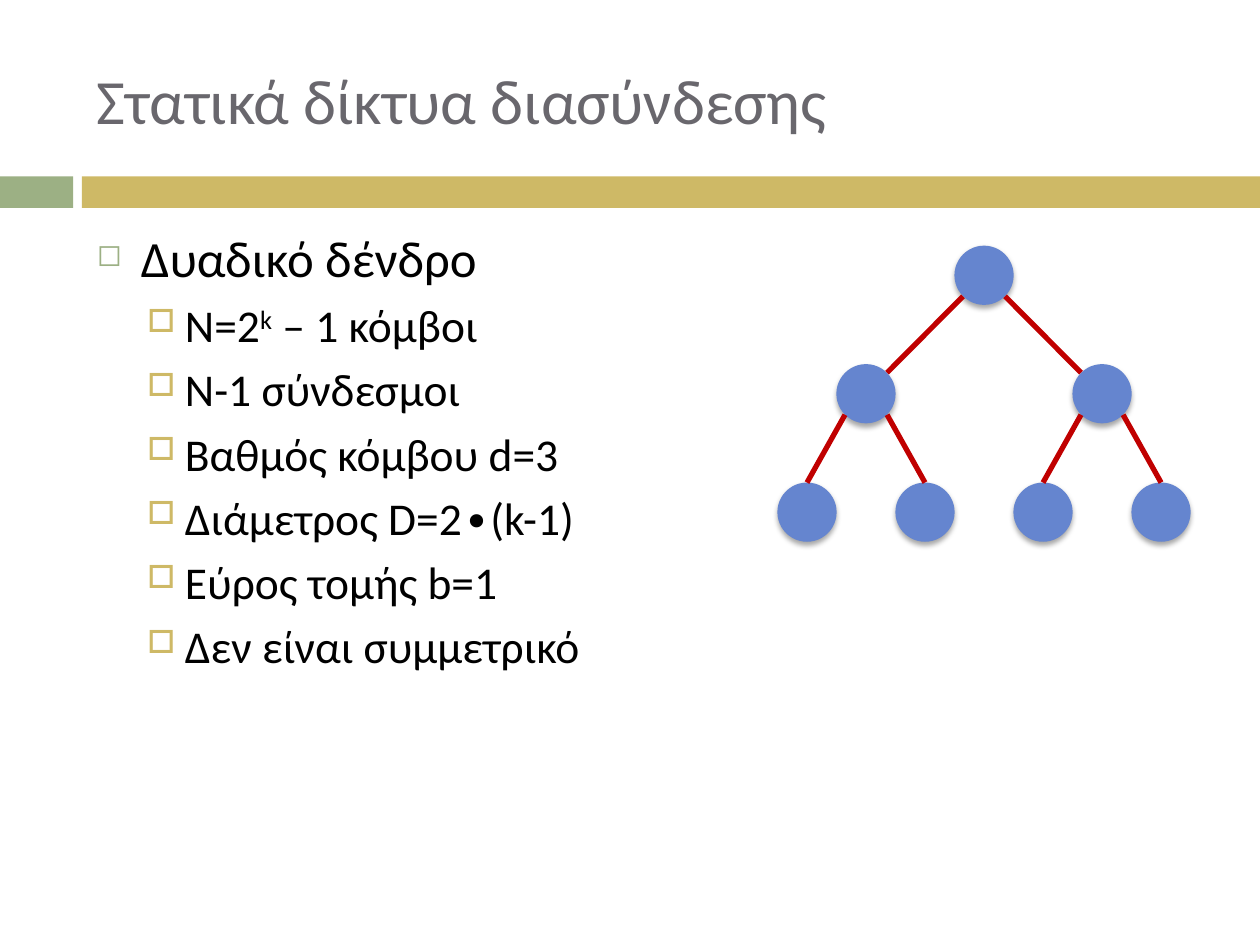
from lxml import etree
from pptx import Presentation
from pptx.dml.color import RGBColor
from pptx.enum.shapes import MSO_CONNECTOR as CONN, MSO_SHAPE as SHAPE
from pptx.enum.text import MSO_ANCHOR as ANCHOR
from pptx.oxml.ns import qn
from pptx.util import Inches, Pt

FONT = "Calibri"
GREEN, GOLD, BLUE, RED = "9CB084", "CEB966", "6585CF", "C00000"
GREY, BLACK = "69676D", "000000"

# Level formats: bullet sizes are percentages, indents are inches
TOPIC = dict(size=29, before=7, left=0.35, hang=0.35, char="◻", color=GREEN, pct=60)
DETAIL = dict(size=26, before=5.5, left=0.7, hang=0.3, char="□", color=GOLD, pct=70)

# Each line is a list of (text, is superscript)
DETAILS = [
    [("N=2", False), ("k", True), (" – 1 κόμβοι", False)],
    [("N-1 σύνδεσμοι", False)],
    [("Βαθμός κόμβου d=3", False)],
    [("Διάμετρος D=2∙(k-1)", False)],
    [("Εύρος τομής b=1", False)],
    [("Δεν είναι συμμετρικό", False)],
]


def rgb(color):
    return RGBColor.from_string(color)


def sub(parent, tag, **attrs):
    return etree.SubElement(parent, qn(tag), {k: str(v) for k, v in attrs.items()})


def add_filled(slide, kind, x, y, w, h, color):
    sp = slide.shapes.add_shape(kind, Inches(x), Inches(y), Inches(w), Inches(h))
    sp.fill.solid()
    sp.fill.fore_color.rgb = rgb(color)
    sp.line.fill.background()
    sp.shadow.inherit = False
    return sp


def add_text_frame(slide, x, y, w, h, anchor):
    tf = slide.shapes.add_textbox(Inches(x), Inches(y), Inches(w), Inches(h)).text_frame
    for name, value in dict(word_wrap=True, vertical_anchor=anchor).items():
        setattr(tf, name, value)
    return tf


def add_run(p, text, size, color, superscript=False):
    r = p.add_run()
    r.text = text
    for name, value in dict(name=FONT, size=Pt(size)).items():
        setattr(r.font, name, value)
    r.font.color.rgb = rgb(color)
    if superscript:
        r.font._element.set("baseline", "30000")


def add_bullet_line(p, runs, level, fmt):
    p.level = level
    p.space_before = Pt(fmt["before"])
    pPr = p._p.get_or_add_pPr()
    pPr.set("marL", str(Inches(fmt["left"])))
    pPr.set("indent", str(-Inches(fmt["hang"])))
    sub(sub(pPr, "a:buClr"), "a:srgbClr", val=fmt["color"])
    sub(pPr, "a:buSzPct", val=fmt["pct"] * 1000)
    sub(pPr, "a:buChar", char=fmt["char"])
    for text, superscript in runs:
        add_run(p, text, fmt["size"], BLACK, superscript)


def add_band(slide, x, y, w, h):
    tab, gap = 0.58, 0.07
    start = tab + gap
    add_filled(slide, SHAPE.RECTANGLE, x, y, tab, h, GREEN)
    add_filled(slide, SHAPE.RECTANGLE, x + start, y, w - start, h, GOLD)


def add_title(slide, x, y, w, h):
    tf = add_text_frame(slide, x, y, w, h, ANCHOR.MIDDLE)
    add_run(tf.paragraphs[0], "Στατικά δίκτυα διασύνδεσης", 36, GREY)


def add_body(slide, x, y, w, h):
    tf = add_text_frame(slide, x, y, w, h, ANCHOR.TOP)
    add_bullet_line(tf.paragraphs[0], [("Δυαδικό δένδρο", False)], 0, TOPIC)
    for runs in DETAILS:
        add_bullet_line(tf.add_paragraph(), runs, 1, DETAIL)


def add_node(slide, cx, cy, d):
    sp = add_filled(slide, SHAPE.OVAL, cx - d / 2, cy - d / 2, d, d, BLUE)
    effects = sp._element.spPr.find(qn("a:effectLst"))
    shadow = sub(effects, "a:outerShdw", blurRad=Pt(3), dist=Pt(2), dir=90 * 60000, rotWithShape=0)
    sub(sub(shadow, "a:srgbClr", val=BLACK), "a:alpha", val=35000)


def add_edge(slide, x1, y1, x2, y2):
    line = slide.shapes.add_connector(CONN.STRAIGHT, Inches(x1), Inches(y1), Inches(x2), Inches(y2))
    line.line.color.rgb = rgb(RED)
    line.line.width = Pt(3)
    sub(line._element.spPr, "a:effectLst")


def add_tree(slide, x, y, w, h, levels=3):
    d = 0.47
    row_gap = (h - d) / (levels - 1)
    leaf_gap = (w - d) / (2 ** (levels - 1) - 1)
    corner = d / 2 * 0.71  # offset of a 45° point on the circle

    def center(level, i):
        span = 2 ** (levels - 1 - level)
        return x + d / 2 + leaf_gap * (span * i + (span - 1) / 2), y + d / 2 + row_gap * level

    nodes = [(level, i) for level in range(levels) for i in range(2 ** level)]
    for level, i in nodes:
        add_node(slide, *center(level, i), d)

    # Edges meet leaves at the top and inner nodes at the facing corner
    for level, i in nodes[1:]:
        cx, cy = center(level, i)
        px, py = center(level - 1, i // 2)
        side = 1 if i % 2 else -1
        is_leaf = level == levels - 1
        end = (cx, cy - d / 2) if is_leaf else (cx - side * corner, cy - corner)
        add_edge(slide, px + side * corner, py + corner, *end)


def main():
    prs = Presentation()
    prs.slide_width, prs.slide_height = Inches(10), Inches(7.5)
    slide = prs.slides.add_slide(prs.slide_layouts[6])
    add_band(slide, 0, 1.4, 10, 0.25)
    add_title(slide, 0.67, 0.25, 8.92, 1.08)
    add_body(slide, 0.67, 1.75, 9.33, 5.75)
    add_tree(slide, 6.17, 1.95, 3.28, 2.35)
    prs.save("out.pptx")


if __name__ == "__main__":
    main()
